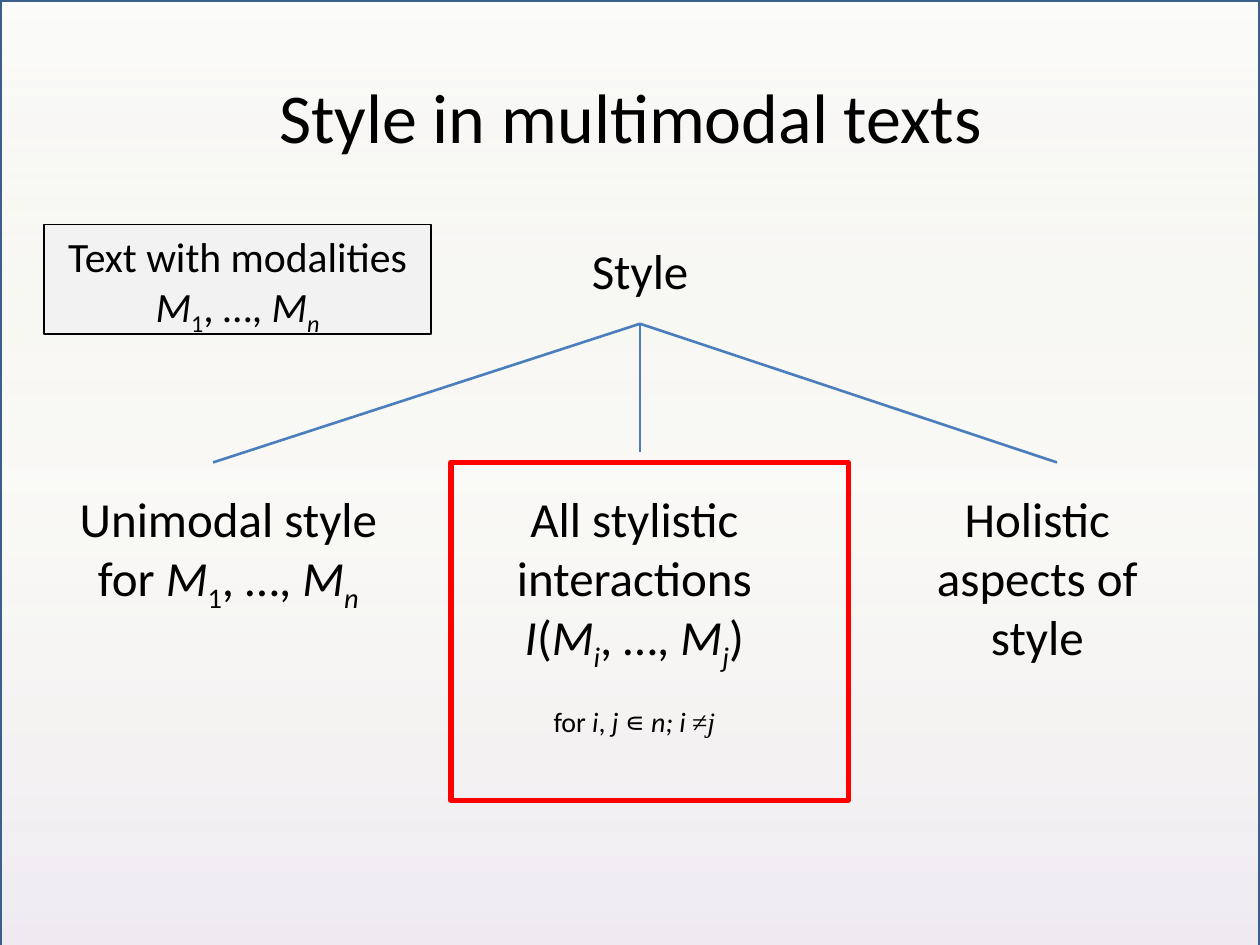
from lxml import etree
from pptx import Presentation
from pptx.dml.color import RGBColor
from pptx.enum.shapes import MSO_CONNECTOR, MSO_SHAPE
from pptx.enum.text import MSO_ANCHOR, PP_ALIGN
from pptx.oxml.ns import qn
from pptx.util import Pt

RECTANGLE = MSO_SHAPE.RECTANGLE
STRAIGHT = MSO_CONNECTOR.STRAIGHT
CENTER = PP_ALIGN.CENTER
TOP, MIDDLE = MSO_ANCHOR.TOP, MSO_ANCHOR.MIDDLE

BODY_FONT, SYMBOL_FONT = "Calibri", "Times New Roman"
BLACK, BLUE, RED, GREY = "000000", "4B7EBC", "FF0000", "F2F2F2"
PLAIN, ITALIC, SUB, ITALIC_SUB, SYMBOL, ITALIC_SYMBOL = "", "i", "s", "is", "t", "it"

MODALITIES = [("M", ITALIC), ("1", SUB), (", …, ", PLAIN), ("M", ITALIC), ("n", ITALIC_SUB)]
INTERACTION = [("I", ITALIC), ("(", PLAIN), ("M", ITALIC), ("i", ITALIC_SUB),
               (", …, ", PLAIN), ("M", ITALIC), ("j", ITALIC_SUB), (")", PLAIN)]
CONDITION = [("for ", PLAIN), ("i", ITALIC), (", ", PLAIN), ("j ", ITALIC), ("∊ ", PLAIN),
             ("n; i ", ITALIC), ("≠", SYMBOL), ("j", ITALIC_SYMBOL)]


def color(value):
    return RGBColor.from_string(value)


def add_panel(page, box, line_color, line_width, fill=None):
    panel = page.shapes.add_shape(RECTANGLE, *map(Pt, box))
    panel.shadow.inherit = False
    panel.line.color.rgb = color(line_color)
    panel.line.width = Pt(line_width)
    if fill:
        panel.fill.solid()
        panel.fill.fore_color.rgb = color(fill)
    else:
        panel.fill.background()
    return panel


def write_lines(frame, lines, size, anchor=TOP):
    frame.word_wrap = True
    frame.vertical_anchor = anchor
    for index, line in enumerate(lines):
        para = frame.paragraphs[0] if index == 0 else frame.add_paragraph()
        para.alignment = CENTER
        for text, style in [(line, PLAIN)] if isinstance(line, str) else line:
            span = para.add_run()
            span.text = text
            span.font.size = Pt(size)
            span.font.name = SYMBOL_FONT if "t" in style else BODY_FONT
            span.font.italic = "i" in style
            span.font.color.rgb = color(BLACK)
            if "s" in style:
                span.font._element.set("baseline", "-25000")


def add_label(page, box, lines, size=28, anchor=TOP):
    label = page.shapes.add_textbox(*map(Pt, box))
    write_lines(label.text_frame, lines, size, anchor)
    return label


def add_backdrop(page, box):
    backdrop = add_panel(page, box, "3A5F8C", 2)
    backdrop.fill.gradient()
    backdrop.fill.gradient_angle = 270
    stops = backdrop._element.spPr.find(qn("a:gradFill")).find(qn("a:gsLst"))
    for stop in list(stops):
        stops.remove(stop)
    for position, value, opacity in [(0, GREY, 30), (50, "C4BD97", 7), (100, "B3A2C7", 22)]:
        stop = etree.SubElement(stops, qn("a:gs"), pos=str(position * 1000))
        shade = etree.SubElement(stop, qn("a:srgbClr"), val=value)
        etree.SubElement(shade, qn("a:alpha"), val=str(opacity * 1000))


def add_branches(page, box):
    left, top, width, height = box
    root = 365.75
    for end_x, end_y in [(left, top + height), (left + width, top + height), (root, top + 73.5)]:
        branch = page.shapes.add_connector(STRAIGHT, Pt(root), Pt(top), Pt(end_x), Pt(end_y))
        branch.line.color.rgb = color(BLUE)
        branch.line.width = Pt(1.5)
        etree.SubElement(branch._element.spPr, qn("a:effectLst"))


def add_interactions(page, box):
    lines = ["All stylistic", "interactions", INTERACTION, CONDITION]
    label = add_label(page, box, lines)
    formula, condition = label.text_frame.paragraphs[2:]
    formula.space_after = condition.space_after = Pt(12)
    condition.space_before = Pt(6)
    for span in condition.runs:
        span.font.size = Pt(16)


def add_text_note(page, box):
    note = add_panel(page, box, BLACK, 1, GREY)
    write_lines(note.text_frame, ["Text with modalities", MODALITIES], 23.8)


def main():
    deck = Presentation()
    deck.slide_width, deck.slide_height = Pt(720), Pt(540)
    page = deck.slides.add_slide(deck.slide_layouts[6])
    add_backdrop(page, (0, 0, 720, 553.7))
    add_label(page, (82, 21, 556.5, 90), ["Style in multimodal texts"], 40, MIDDLE)
    root = add_label(page, (258, 134, 215.5, 45.5), ["Style"])
    root.text_frame.paragraphs[0].space_before = Pt(6)
    root.text_frame.paragraphs[0].space_after = Pt(18)
    add_branches(page, (121.75, 185, 482.25, 79.25))
    add_label(page, (20, 275.75, 221, 96.5), ["Unimodal style", [("for ", PLAIN)] + MODALITIES])
    add_interactions(page, (252, 275.75, 221, 175.75))
    add_label(page, (513.5, 275.75, 158.5, 175.75), ["Holistic", "aspects of", "style"])
    add_text_note(page, (25.25, 128.25, 221, 62.5))
    add_panel(page, (257.75, 264.25, 227, 193), RED, 3)
    deck.save("out.pptx")


if __name__ == "__main__":
    main()
